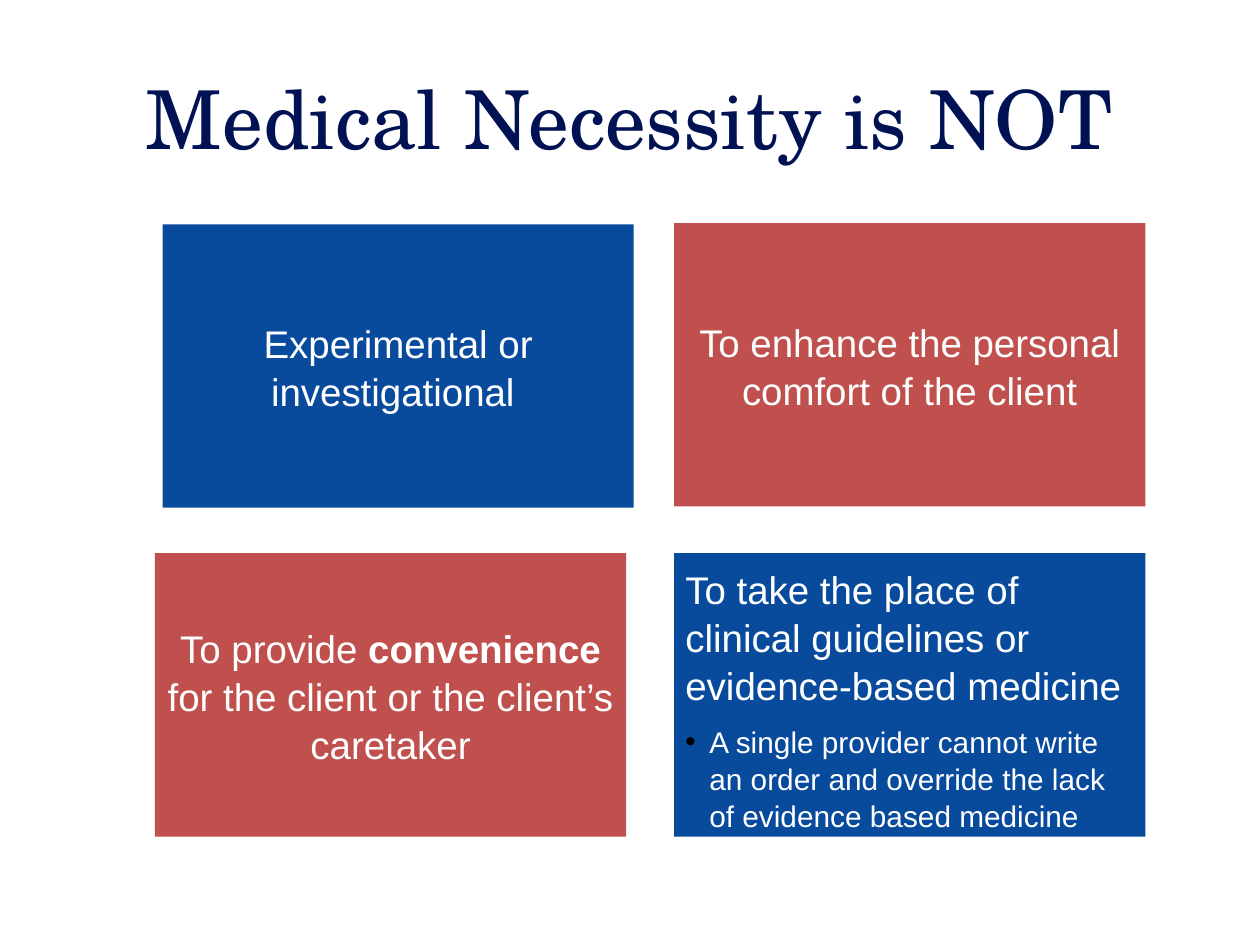
from dataclasses import dataclass

from lxml.etree import SubElement
from pptx import Presentation
from pptx.dml.color import RGBColor
from pptx.enum.shapes import MSO_SHAPE
from pptx.enum.text import MSO_ANCHOR, PP_ALIGN
from pptx.oxml.ns import qn
from pptx.util import Inches, Pt

BLUE, RED, WHITE, NAVY, BLACK = "084A9C", "BF504D", "FFFFFF", "001254", "000000"
CARD_WIDTH, CARD_HEIGHT = 3.74, 2.25


@dataclass(frozen=True)
class Card:
    left: float
    top: float
    fill: str
    spans: tuple[str, ...]
    bold: str = ""
    bullet: str = ""


CARDS = (
    Card(1.29, 1.78, BLUE, ("Experimental or investigational ",)),
    Card(5.35, 1.77, RED, ("To enhance the personal comfort of the client",)),
    Card(
        1.23,
        4.39,
        RED,
        ("To provide ", "convenience", " for the client or the client’s caretaker"),
        bold="convenience",
    ),
    Card(
        5.35,
        4.39,
        BLUE,
        ("To take the place of clinical guidelines or evidence-based medicine",),
        bullet="A single provider cannot write an order and override the lack "
        "of evidence based medicine",
    ),
)


def paint(color_format, color: str) -> None:
    color_format.rgb = RGBColor.from_string(color)


def style_span(span, size: float, color: str, font: str = "Arial") -> None:
    span.font.name = font
    span.font.size = Pt(size)
    paint(span.font.color, color)


def set_frame(frame, inset: float, anchor) -> None:
    frame.word_wrap = True
    frame.vertical_anchor = anchor
    frame.margin_left = frame.margin_right = Inches(inset)
    frame.margin_top = frame.margin_bottom = Inches(inset)


def add_title(page, text: str) -> None:
    box = page.shapes.add_textbox(Inches(0.25), Inches(0.48), Inches(9.49), Inches(0.89))
    set_frame(box.text_frame, 0, MSO_ANCHOR.MIDDLE)
    box.text_frame.text = text
    para = box.text_frame.paragraphs[0]
    para.alignment = PP_ALIGN.CENTER
    style_span(para.runs[0], 46.4, NAVY, "TeX Gyre Schola")


def add_bullet(frame, text: str) -> None:
    para = frame.add_paragraph()
    para.text = text
    para.level = 1
    para.alignment = PP_ALIGN.LEFT
    para.line_spacing = 1.04
    para.space_before = Pt(7.7)
    style_span(para.runs[0], 17, WHITE)
    properties = para._p.get_or_add_pPr()
    properties.set("marL", str(Inches(0.19)))
    properties.set("indent", str(Inches(-0.19)))
    bullet_color = SubElement(properties, qn("a:buClr"))
    SubElement(bullet_color, qn("a:srgbClr"), val=BLACK)
    SubElement(properties, qn("a:buFont"), typeface="Arial")
    SubElement(properties, qn("a:buChar"), char="•")


def add_card(page, card: Card) -> None:
    box = page.shapes.add_shape(
        MSO_SHAPE.RECTANGLE,
        Inches(card.left),
        Inches(card.top),
        Inches(CARD_WIDTH),
        Inches(CARD_HEIGHT),
    )
    box.shadow.inherit = False
    box.fill.solid()
    paint(box.fill.fore_color, card.fill)
    box.line.fill.background()
    frame = box.text_frame
    set_frame(frame, 0.09, MSO_ANCHOR.TOP if card.bullet else MSO_ANCHOR.MIDDLE)
    para = frame.paragraphs[0]
    para.alignment = PP_ALIGN.LEFT if card.bullet else PP_ALIGN.CENTER
    para.line_spacing = 1.04
    for text in card.spans:
        span = para.add_run()
        span.text = text
        style_span(span, 22, WHITE)
        span.font.bold = text == card.bold
    if card.bullet:
        add_bullet(frame, card.bullet)


def main() -> None:
    deck = Presentation()
    deck.slide_width, deck.slide_height = Inches(10), Inches(7.5)
    page = deck.slides.add_slide(deck.slide_layouts[6])
    page.background.fill.solid()
    paint(page.background.fill.fore_color, WHITE)
    add_title(page, "Medical Necessity is NOT")
    for card in CARDS:
        add_card(page, card)
    deck.save("out.pptx")


if __name__ == "__main__":
    main()
